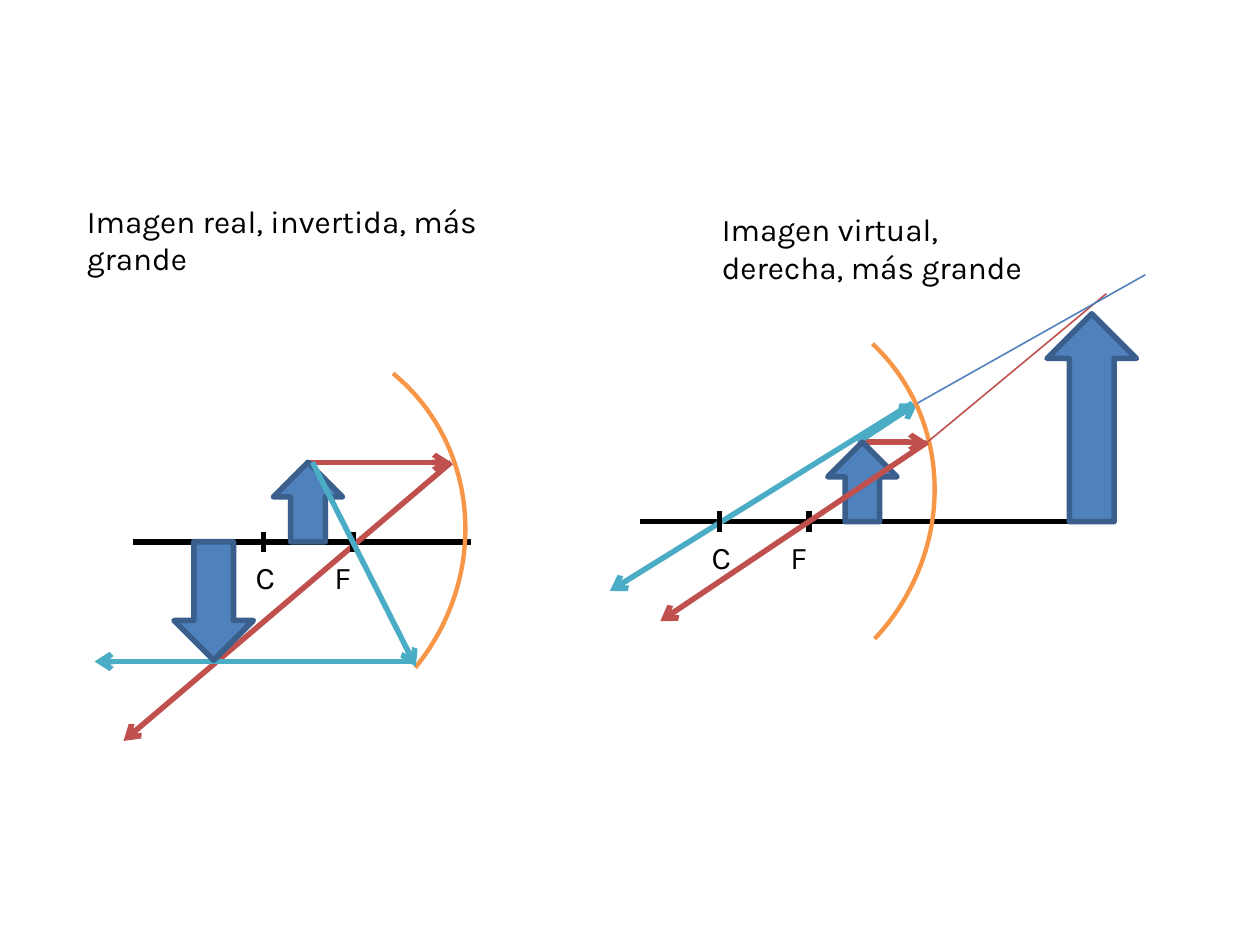
from lxml import etree
from pptx import Presentation
from pptx.dml.color import RGBColor
from pptx.enum.shapes import MSO_CONNECTOR, MSO_SHAPE
from pptx.oxml.ns import qn
from pptx.util import Pt

STRAIGHT = MSO_CONNECTOR.STRAIGHT
UP, DOWN, ARC = MSO_SHAPE.UP_ARROW, MSO_SHAPE.DOWN_ARROW, MSO_SHAPE.ARC

BLACK, RED, CYAN, BLUE = "000000", "C0504D", "4BACC6", "4F81BD"
ARROW_EDGE, MIRROR = "3A5F8C", "F79646"
FONT = "Karla"
THICK, THIN, MIRROR_WIDTH = 3.15, 0.9, 2.5
FOCAL_GAP = 51.1      # from C to F along the axis
TICK = 5.8            # half the height of a tick
MIRROR_SIZE = (232.6, 244.1)

# Rays: start x, y, end x, y, colour. Arrows: shape, left, top, width, height.
DIAGRAMS = [
    {
        "caption": ("Imagen real, invertida, más grande", 42.5, 111.6, 238.3, 51.1),
        "axis": (76.3, 269.3, 309.6),
        "center_x": 150.5,
        "mirror": (31, 185.8, 39.3),
        "rays_behind": [
            (175.7, 264.2, 257.8, 264.2, RED),
            (257.8, 264.2, 70.6, 423.4, RED),
            (235.4, 378, 54, 378, CYAN),
        ],
        "object": (UP, 156.2, 264.2, 39.6, 45.4),
        "ray_in_front": (178.6, 264.2, 237.6, 380.9, CYAN),
        "extensions": [],
        "image": (DOWN, 99.4, 309.6, 45.4, 67.7),
    },
    {
        "caption": ("Imagen virtual, derecha, más grande", 405.4, 116.6, 187.2, 51.1),
        "axis": (365.8, 632.2, 298.1),
        "center_x": 411.1,
        "mirror": (298.8, 163.4, 43.2),
        "rays_behind": [
            (490.3, 252.7, 529.9, 252.7, RED),
            (521.3, 230.4, 348.5, 337.7, CYAN),
            (490.3, 252.7, 524.2, 230.4, CYAN),
        ],
        "object": (UP, 473, 252.7, 39.6, 45.4),
        "ray_in_front": (529.9, 252.7, 377.3, 355, RED),
        "extensions": [
            (529.9, 252.7, 632.2, 167.8, RED),
            (524.2, 230.4, 654.5, 157, BLUE),
        ],
        "image": (UP, 598.3, 179.3, 51.1, 118.8),
    },
]


def paint(fmt, color):
    if hasattr(fmt, "solid"):
        fmt.solid()
        fmt.fore_color.rgb = RGBColor.from_string(color)
    else:
        fmt.color.rgb = RGBColor.from_string(color)


def add_line(slide, x1, y1, x2, y2, color, width=THICK, arrow=False):
    line = slide.shapes.add_connector(STRAIGHT, Pt(x1), Pt(y1), Pt(x2), Pt(y2))
    paint(line.line, color)
    line.line.width = Pt(width)
    props = line._element.spPr
    if arrow:
        etree.SubElement(props.find(qn("a:ln")), qn("a:tailEnd"), type="arrow")
    etree.SubElement(props, qn("a:effectLst"))


def add_outlined(slide, kind, left, top, width, height, color, line_width):
    sp = slide.shapes.add_shape(kind, Pt(left), Pt(top), Pt(width), Pt(height))
    sp.shadow.inherit = False
    paint(sp.line, color)
    sp.line.width = Pt(line_width)
    return sp


def add_arrow(slide, kind, left, top, width, height):
    sp = add_outlined(slide, kind, left, top, width, height, ARROW_EDGE, THICK)
    paint(sp.fill, BLUE)


def add_text(slide, text, left, top, width, height, tab=None):
    box = slide.shapes.add_textbox(Pt(left), Pt(top), Pt(width), Pt(height))
    tf = box.text_frame
    tf.word_wrap = True
    p = tf.paragraphs[0]
    p.text = text
    if tab:
        tabs = etree.SubElement(p._p.get_or_add_pPr(), qn("a:tabLst"))
        etree.SubElement(tabs, qn("a:tab"), pos=str(Pt(tab)), algn="l")
    p.font.name, p.font.size = FONT, Pt(18)
    paint(p.font, BLACK)


def add_diagram(slide, d):
    left, right, y = d["axis"]
    center_x = d["center_x"]
    add_line(slide, left, y, right, y, BLACK)
    for ray in d["rays_behind"]:
        add_line(slide, *ray, arrow=True)
    add_arrow(slide, *d["object"])
    add_text(slide, "C\tF", center_x - 11.5, y + TICK, 85, 28.8, tab=45)

    x, top, angle = d["mirror"]
    arc = add_outlined(slide, ARC, x, top, *MIRROR_SIZE, MIRROR, MIRROR_WIDTH)
    arc.fill.background()
    arc.rotation = angle

    for x in (center_x, center_x + FOCAL_GAP):
        add_line(slide, x, y - TICK, x, y + TICK, BLACK)
    add_line(slide, *d["ray_in_front"], arrow=True)
    for extension in d["extensions"]:
        add_line(slide, *extension, width=THIN)
    add_arrow(slide, *d["image"])
    add_text(slide, *d["caption"])


prs = Presentation()
prs.slide_width, prs.slide_height = Pt(720), Pt(540)
slide = prs.slides.add_slide(prs.slide_layouts[6])
for diagram in DIAGRAMS:
    add_diagram(slide, diagram)
prs.save("out.pptx")
